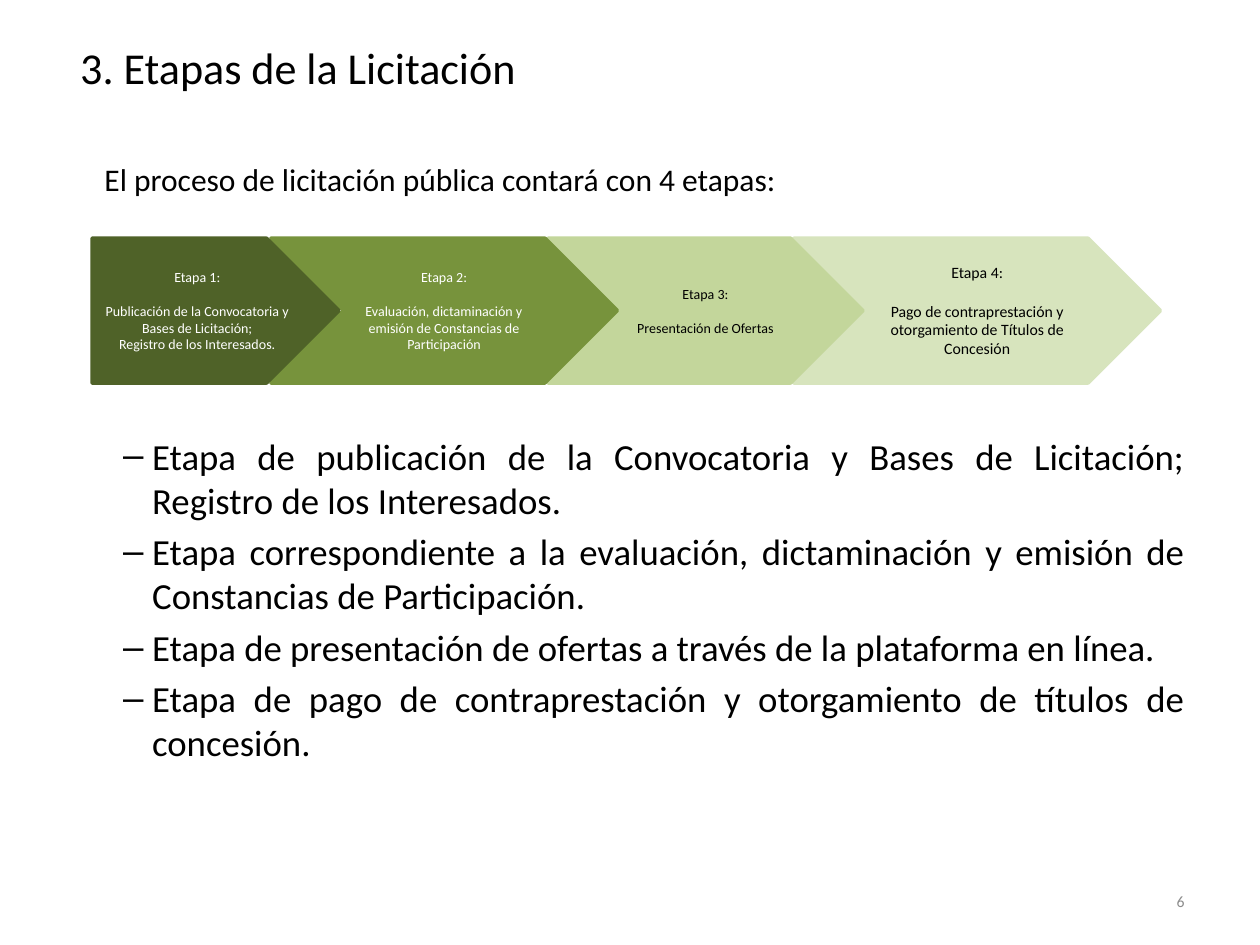
"""Build the slide on the four stages of the public tender."""
from dataclasses import dataclass
from typing import Any

from lxml import etree
from pptx import Presentation
from pptx import util as u
from pptx.dml.color import RGBColor
from pptx.enum import shapes, text
from pptx.oxml import ns

BLACK = RGBColor(0x00, 0x00, 0x00)
WHITE = RGBColor(0xFF, 0xFF, 0xFF)
GRAY = RGBColor(0x8C, 0x8C, 0x8C)
DARK_GREEN = RGBColor(0x4F, 0x62, 0x28)
GREEN = RGBColor(0x77, 0x93, 0x3C)
LIGHT_GREEN = RGBColor(0xC3, 0xD6, 0x9B)
PALE_GREEN = RGBColor(0xD7, 0xE4, 0xBD)

FONT = "Calibri"
LINE_HEIGHT = 1.22
STAGE_TOP, STAGE_HEIGHT = 136.1, 82.8
LEFT, CENTER, RIGHT, JUSTIFY = (
    text.PP_ALIGN.LEFT, text.PP_ALIGN.CENTER, text.PP_ALIGN.RIGHT, text.PP_ALIGN.JUSTIFY)
TOP, MIDDLE = text.MSO_ANCHOR.TOP, text.MSO_ANCHOR.MIDDLE
CHEVRON = shapes.MSO_SHAPE.CHEVRON


@dataclass(frozen=True)
class Stage:
    left: float
    width: float
    fill: RGBColor
    color: RGBColor
    size: float
    heading: str
    lines: tuple[str, ...]
    preset: shapes.MSO_SHAPE = CHEVRON


@dataclass(frozen=True)
class TextBox:
    left: float
    top: float
    width: float
    height: float
    size: float
    lines: tuple[str, ...]
    alignment: text.PP_ALIGN
    anchor: text.MSO_ANCHOR = TOP
    color: RGBColor = BLACK
    bullet: str = ""


STAGES = (
    Stage(453.6, 209.5, PALE_GREEN, BLACK, 9, "Etapa 4:",
          ("Pago de contraprestación y otorgamiento de Títulos de Concesión",)),
    Stage(313.2, 180, LIGHT_GREEN, BLACK, 8, "Etapa 3:", ("Presentación de Ofertas",)),
    Stage(154.8, 198, GREEN, WHITE, 8, "Etapa 2:",
          ("Evaluación, dictaminación y emisión de Constancias de Participación",)),
    Stage(52.6, 141.1, DARK_GREEN, WHITE, 8, "Etapa 1:",
          ("Publicación de la Convocatoria y Bases de Licitación;",
           "Registro de los Interesados."), shapes.MSO_SHAPE.PENTAGON),
)

TEXT_BOXES = (
    TextBox(27.4, 1.4, 285.8, 73.4, 25.2, ("3. Etapas de la Licitación",), CENTER, MIDDLE),
    TextBox(52.6, 87.8, 501.8, 28.8, 18,
            ("El proceso de licitación pública contará con 4 etapas:",), JUSTIFY),
    TextBox(36, 244.1, 648, 208.8, 21, (
        "Etapa de publicación de la Convocatoria y Bases de Licitación; "
        "Registro de los Interesados.",
        "Etapa correspondiente a la evaluación, dictaminación y emisión de "
        "Constancias de Participación.",
        "Etapa de presentación de ofertas a través de la plataforma en línea.",
        "Etapa de pago de contraprestación y otorgamiento de títulos de concesión.",
    ), JUSTIFY, bullet="–"),
    TextBox(516.2, 500.4, 167.8, 28.8, 9, ("6",), RIGHT, MIDDLE, GRAY),
)


def apply_format(target: Any, values: dict[str, Any]) -> None:
    """Set each named attribute on the target."""
    for name, value in values.items():
        setattr(target, name, value)


def add_bullet(paragraph: Any, character: str) -> None:
    """Give the paragraph a hanging bullet."""
    properties = paragraph._p.get_or_add_pPr()
    properties.set("marL", str(u.Pt(43.9)))
    properties.set("indent", str(u.Pt(-16.6)))
    etree.SubElement(properties, ns.qn("a:buFont")).set("typeface", "Arial")
    etree.SubElement(properties, ns.qn("a:buChar")).set("char", character)


def write_lines(frame: Any, lines: tuple[str, ...], size: float, color: RGBColor,
                alignment: text.PP_ALIGN, anchor: text.MSO_ANCHOR,
                gaps: dict[int, float], bullet: str = "") -> None:
    """Fill the frame with one paragraph per line, spaced by the given gaps."""
    apply_format(frame, {"word_wrap": True, "vertical_anchor": anchor})
    for index, line in enumerate(lines):
        paragraph = frame.add_paragraph() if index else frame.paragraphs[0]
        paragraph.text = line
        apply_format(paragraph, {"alignment": alignment,
                                 "space_before": u.Pt(gaps.get(index, 0))})
        if bullet:
            add_bullet(paragraph, bullet)
        apply_format(paragraph.font, {"name": FONT, "size": u.Pt(size)})
        paragraph.font.color.rgb = color


def add_stage(slide: Any, stage: Stage) -> None:
    """Draw one stage arrow, with a line's gap below its heading."""
    shape = slide.shapes.add_shape(stage.preset, u.Pt(stage.left), u.Pt(STAGE_TOP),
                                   u.Pt(stage.width), u.Pt(STAGE_HEIGHT))
    shape.shadow.inherit = False
    shape.fill.solid()
    shape.fill.fore_color.rgb = stage.fill
    shape.line.color.rgb = stage.fill
    shape.line.width = u.Pt(2)
    write_lines(shape.text_frame, (stage.heading, *stage.lines), stage.size, stage.color,
                CENTER, MIDDLE, {1: stage.size * LINE_HEIGHT})


def add_text_box(slide: Any, box: TextBox) -> None:
    """Draw one text box, with a fifth of the text size between paragraphs."""
    shape = slide.shapes.add_textbox(u.Pt(box.left), u.Pt(box.top),
                                     u.Pt(box.width), u.Pt(box.height))
    gaps = {index: box.size * 0.2 for index in range(1, len(box.lines))}
    write_lines(shape.text_frame, box.lines, box.size, box.color, box.alignment,
                box.anchor, gaps, box.bullet)


def main() -> None:
    """Build and save the presentation."""
    presentation = Presentation()
    apply_format(presentation, {"slide_width": u.Pt(720), "slide_height": u.Pt(540)})
    slide = presentation.slides.add_slide(presentation.slide_layouts[6])
    for stage in STAGES:
        add_stage(slide, stage)
    for box in TEXT_BOXES:
        add_text_box(slide, box)
    presentation.save("out.pptx")


if __name__ == "__main__":
    main()
